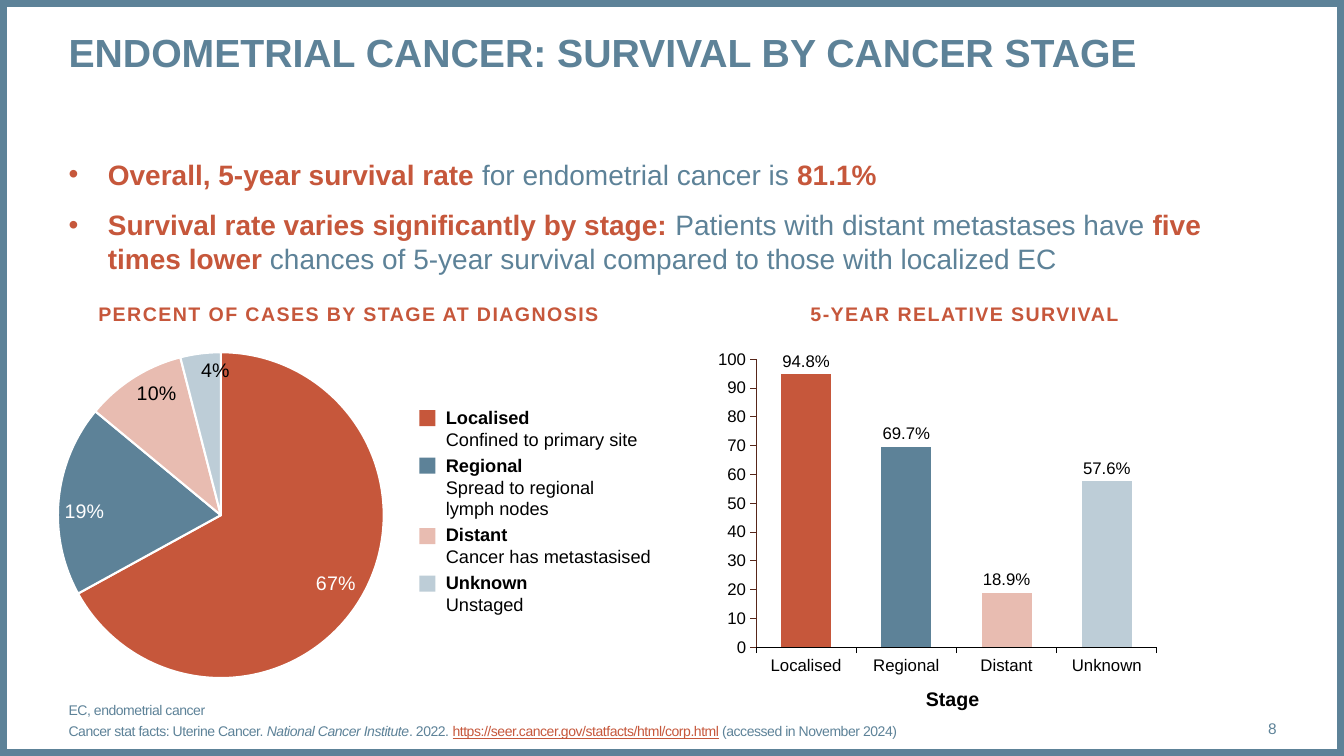
from copy import deepcopy
from dataclasses import dataclass

from lxml import etree
from pptx import Presentation
from pptx.chart.chart import Chart
from pptx.chart.data import CategoryChartData
from pptx.dml.color import RGBColor
from pptx.enum.chart import XL_CHART_TYPE as ChartType
from pptx.enum.chart import XL_LABEL_POSITION as LabelPos
from pptx.enum.chart import XL_TICK_MARK as Tick
from pptx.enum.shapes import MSO_SHAPE
from pptx.enum.text import MSO_ANCHOR as Anchor
from pptx.enum.text import PP_ALIGN as Align
from pptx.oxml import parse_xml
from pptx.oxml.ns import nsdecls, qn
from pptx.util import Pt

FONT = "Arial"
RUST, SLATE, BLACK, WHITE = "C6573B", "5D8298", "000000", "FFFFFF"
PINK, MIST, BROWN = "E8BCB1", "BDCDD7", "57261A"
LEFT = 49


@dataclass
class Stage:
    name: str
    detail: str
    color: str
    label_color: str
    cases: int
    survival: float


@dataclass
class Box:
    left: float
    top: float
    width: float
    height: float

    def lengths(self) -> list[Pt]:
        return [Pt(v) for v in (self.left, self.top, self.width, self.height)]


STAGES = [
    Stage("Localised", "Confined to primary site", RUST, WHITE, 67, 94.8),
    Stage("Regional", "Spread to regional\nlymph nodes", SLATE, WHITE, 19, 69.7),
    Stage("Distant", "Cancer has metastasised", PINK, BLACK, 10, 18.9),
    Stage("Unknown", "Unstaged", MIST, BLACK, 4, 57.6),
]


def rgb(color: str) -> RGBColor:
    return RGBColor.from_string(color)


def set_font(font, size: float, color: str, bold: bool = False, italic: bool = False) -> None:
    font.name, font.size, font.bold, font.italic = FONT, Pt(size), bold, italic
    font.color.rgb = rgb(color)


def add_run(p, text: str, *, size: float, color: str, bold: bool = False,
            italic: bool = False, underline: bool = False, spacing: float = 0) -> None:
    """Add formatted text; each newline becomes a line break of the same size."""
    for i, line in enumerate(text.split("\n")):
        if i:
            p.add_line_break()
            p._p[-1].append(deepcopy(r._r.get_or_add_rPr()))
        if not line:
            continue
        r = p.add_run()
        r.text = line
        set_font(r.font, size, color, bold, italic)
        if underline:
            r.font.underline = True
        if spacing:
            r._r.get_or_add_rPr().set("spc", str(round(spacing * 100)))


def clear_frame(tf, anchor=Anchor.TOP) -> None:
    """Remove the insets, wrap the text and set its anchor."""
    tf.margin_left = tf.margin_top = tf.margin_right = tf.margin_bottom = 0
    tf.word_wrap, tf.vertical_anchor = True, anchor


def add_text(s, box: Box, paragraphs: list[list[tuple[str, dict]]], *, size: float,
             color: str, spacing: float = 0, before: float = 0, after: float = 0,
             align=Align.LEFT, anchor=Anchor.TOP, bullets: bool = False) -> None:
    """Add a text box; each run is its text and what differs from the box format."""
    tf = s.shapes.add_textbox(*box.lengths()).text_frame
    clear_frame(tf, anchor)
    for i, runs in enumerate(paragraphs):
        p = tf.add_paragraph() if i else tf.paragraphs[0]
        p.alignment = align
        p.space_before, p.space_after = Pt(before if i else 0), Pt(after)
        if bullets:
            add_bullet(p)
        for text, style in runs:
            add_run(p, text, **({"size": size, "color": color, "spacing": spacing} | style))


def add_bullet(p, indent: float = 28) -> None:
    pPr = p._p.get_or_add_pPr()
    pPr.set("marL", str(Pt(indent)))
    pPr.set("indent", str(-Pt(indent)))
    color = etree.SubElement(pPr, qn("a:buClr"))
    etree.SubElement(color, qn("a:srgbClr")).set("val", RUST)
    etree.SubElement(pPr, qn("a:buFont")).set("typeface", FONT)
    etree.SubElement(pPr, qn("a:buChar")).set("char", "•")


def add_square(s, box: Box, color: str) -> None:
    sp = s.shapes.add_shape(MSO_SHAPE.RECTANGLE, *box.lengths())
    sp.shadow.inherit = False
    sp.fill.solid()
    sp.fill.fore_color.rgb = rgb(color)
    sp.line.fill.background()


def add_frame(s, box: Box) -> None:
    sp = s.shapes.add_shape(MSO_SHAPE.RECTANGLE, *box.lengths())
    sp.shadow.inherit = False
    sp.fill.background()
    sp.line.color.rgb, sp.line.width = rgb(SLATE), Pt(10)


def place_plot(chart: Chart, x: float, y: float, w: float, h: float) -> None:
    """Fix the inner plot area, as fractions of the chart."""
    values = "".join(f'<c:{k} val="{v}"/>' for k, v in zip("xywh", (x, y, w, h)))
    area = chart._chartSpace.chart.plotArea
    for old in area.findall(qn("c:layout")):
        area.remove(old)
    area.insert(0, parse_xml(
        f'<c:layout {nsdecls("c")}><c:manualLayout><c:layoutTarget val="inner"/>'
        f'<c:xMode val="edge"/><c:yMode val="edge"/>{values}</c:manualLayout></c:layout>'))


def add_stage_chart(s, kind, box: Box, values: list[float], *, number_format: str,
                    size: float, position, label_colors: list[str]) -> Chart:
    data = CategoryChartData(number_format=number_format)
    data.categories = [stage.name for stage in STAGES]
    data.add_series("Series 1", values)
    chart = s.shapes.add_chart(kind, *box.lengths(), data).chart
    chart.has_legend = chart.has_title = False
    set_font(chart.font, size, BLACK)
    plot = chart.plots[0]
    plot.has_data_labels = True
    labels = plot.data_labels
    labels.show_value, labels.position = True, position
    labels.number_format, labels.number_format_is_linked = number_format, False
    set_font(labels.font, size, BLACK)
    for i, (stage, label_color) in enumerate(zip(STAGES, label_colors)):
        point = plot.series[0].points[i]
        point.format.fill.solid()
        point.format.fill.fore_color.rgb = rgb(stage.color)
        set_font(point.data_label.font, size, label_color)
        point.data_label.position = position
    return chart


def add_pie(s) -> None:
    chart = add_stage_chart(s, ChartType.PIE, Box(15.5, 241.5, 284.5, 253),
                            [stage.cases for stage in STAGES], number_format='0"%"',
                            size=14, position=LabelPos.INSIDE_END,
                            label_colors=[stage.label_color for stage in STAGES])
    place_plot(chart, 0.09, 0.04, 0.82, 0.92)
    for i in range(len(STAGES)):
        line = chart.plots[0].series[0].points[i].format.line
        line.color.rgb, line.width = rgb(WHITE), Pt(1.5)


def add_columns(s) -> None:
    chart = add_stage_chart(s, ChartType.COLUMN_CLUSTERED, Box(507.5, 247, 325.5, 242),
                            [stage.survival for stage in STAGES], number_format='0.0"%"',
                            size=12, position=LabelPos.OUTSIDE_END,
                            label_colors=[BLACK] * len(STAGES))
    place_plot(chart, 0.1, 0.04, 0.88, 0.85)
    chart.plots[0].gap_width = 101
    chart.plots[0].vary_by_categories = False
    for axis, color in ((chart.category_axis, BLACK), (chart.value_axis, BROWN)):
        axis.has_major_gridlines = False
        axis.major_tick_mark, axis.minor_tick_mark = Tick.OUTSIDE, Tick.NONE
        axis.format.line.color.rgb, axis.format.line.width = rgb(color), Pt(0.75)
        set_font(axis.tick_labels.font, 12, BLACK)
    axis = chart.value_axis
    axis.minimum_scale, axis.maximum_scale, axis.major_unit = 0, 100, 10
    axis.tick_labels.number_format = "0"
    axis.tick_labels.number_format_is_linked = False


def add_stage_key(s) -> None:
    add_text(s, Box(318.5, 290, 175, 151),
             [[(stage.name + "\n", {"bold": True}), (stage.detail, {})] for stage in STAGES],
             size=13, color=BLACK, after=3)
    top = 293
    for stage in STAGES:
        add_square(s, Box(299.5, top, 11.5, 11.5), stage.color)
        lines = 2 + stage.detail.count("\n")
        top += 16.5 * lines + 0.9


def main() -> None:
    prs = Presentation()
    prs.slide_width, prs.slide_height = Pt(960), Pt(540)
    s = prs.slides.add_slide(prs.slide_layouts[5])
    add_frame(s, Box(0, 0, 960, 540))

    title = s.shapes.title
    title.left, title.top, title.width, title.height = Box(LEFT, 20, 863, 68).lengths()
    clear_frame(title.text_frame)
    p = title.text_frame.paragraphs[0]
    p.alignment = Align.LEFT
    add_run(p, "ENDOMETRIAL CANCER: SURVIVAL BY CANCER STAGE", size=28, color=SLATE, bold=True)

    strong = {"color": RUST, "bold": True}
    add_text(s, Box(LEFT, 112.5, 863, 90), [
        [("Overall, 5-year survival rate", strong), (" for endometrial cancer is ", {}),
         ("81.1%", strong)],
        [("Survival rate varies significantly by stage: ", strong),
         ("Patients with distant metastases have ", {}), ("five times lower ", strong),
         ("chances of 5-year survival compared to those with localized EC", {})],
    ], size=20, color=SLATE, before=12, bullets=True)

    for text, box in (("PERCENT OF CASES BY STAGE AT DIAGNOSIS", Box(59, 215.5, 380, 17)),
                      ("5-YEAR RELATIVE SURVIVAL", Box(569, 215.5, 240, 17))):
        add_text(s, box, [[(text, {"bold": True})]], size=14, color=RUST, spacing=1,
                 align=Align.CENTER)
    add_pie(s)
    add_stage_key(s)
    add_columns(s)
    add_text(s, Box(640.5, 490.5, 80, 17), [[("Stage", {"bold": True})]], size=14,
             color=BLACK, align=Align.CENTER)

    add_text(s, Box(LEFT, 500, 801, 29), [
        [("EC, endometrial cancer", {})],
        [("Cancer stat facts: Uterine Cancer. ", {}),
         ("National Cancer Institute", {"italic": True}), (". 2022. ", {}),
         ("https://seer.cancer.gov/statfacts/html/corp.html",
          {"color": RUST, "underline": True}),
         (" (accessed in November 2024)", {})],
    ], size=10, color=SLATE, spacing=-0.3, before=3, anchor=Anchor.MIDDLE)
    add_text(s, Box(850, 506, 62, 29), [[("8", {})]], size=11, color=SLATE,
             align=Align.RIGHT, anchor=Anchor.MIDDLE)
    prs.save("out.pptx")


if __name__ == "__main__":
    main()
